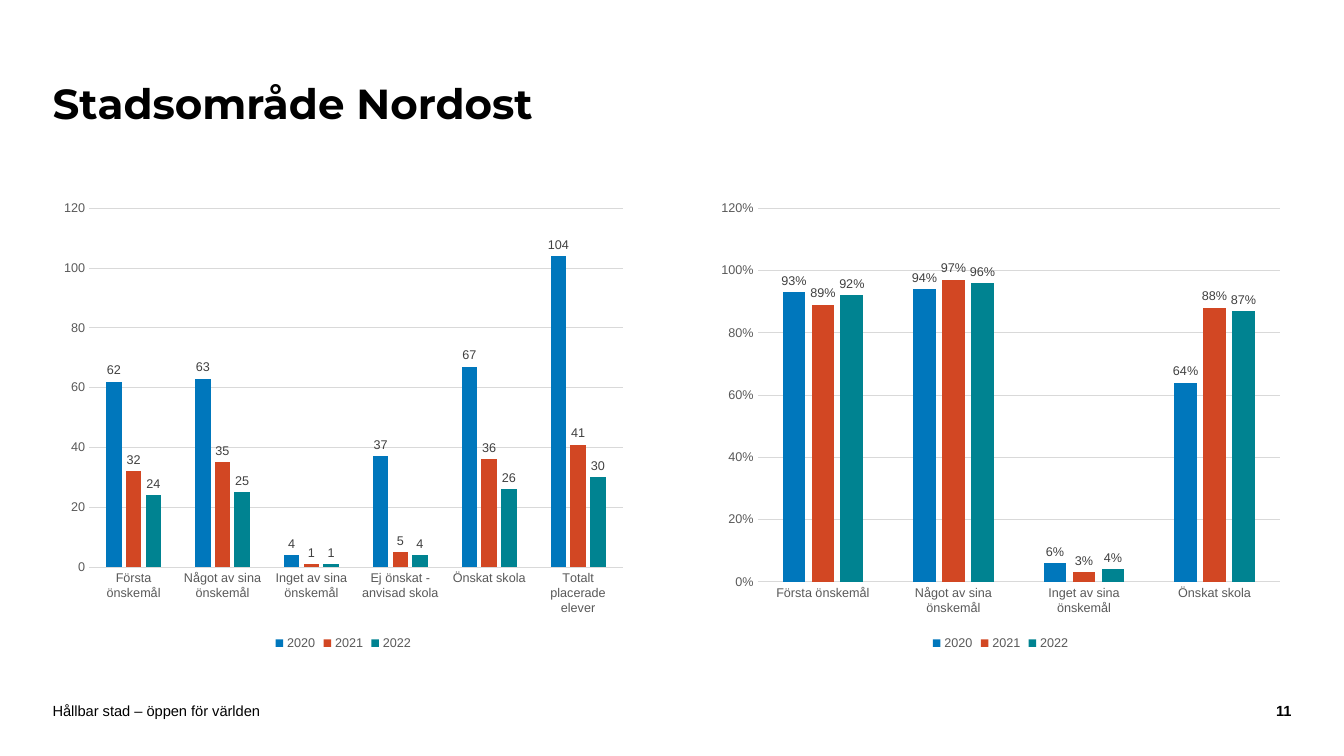
"""Build the slide on school placements in Stadsområde Nordost."""
from pptx import Presentation
from pptx.chart.data import CategoryChartData
from pptx.dml.color import RGBColor
from pptx.enum import chart as ch, text as tx
from pptx.util import Pt

HUES = {"ink": "000000", "axis": "595959", "grid": "D9D9D9", "label": "404040",
        "2020": "0077BC", "2021": "D24723", "2022": "008391"}
LEFT, WIDE = 37.5, 415.5


def style(font, size, hue, bold=False, face="Arial"):
    font.name, font.size, font.bold = face, Pt(size), bold
    font.color.rgb = RGBColor.from_string(HUES[hue])


def paint(line):
    line.color.rgb = RGBColor.from_string(HUES["grid"])
    line.width = Pt(0.75)


prs = Presentation()
prs.slide_width, prs.slide_height = Pt(960), Pt(540)
slide = prs.slides.add_slide(prs.slide_layouts[5])

title = slide.shapes.title
title.left, title.top, title.width, title.height = Pt(LEFT), Pt(30), Pt(722), Pt(91)
frame = title.text_frame
frame.text = "Stadsområde Nordost"
frame.margin_left = frame.margin_right = 0
frame.vertical_anchor = tx.MSO_ANCHOR.MIDDLE
frame.auto_size = tx.MSO_AUTO_SIZE.NONE
head = frame.paragraphs[0]
head.alignment, head.line_spacing = tx.PP_ALIGN.LEFT, 0.9
style(head.runs[0].font, 30, "ink", True, "Montserrat")

feet = [("Hållbar stad – öppen för världen", LEFT, 680, tx.PP_ALIGN.LEFT, False),
        ("11", 876, 46.5, tx.PP_ALIGN.RIGHT, True)]
for words, left, width, align, bold in feet:
    frame = slide.shapes.add_textbox(Pt(left), Pt(502), Pt(width), Pt(11.5)).text_frame
    frame.text = words
    frame.word_wrap = True
    frame.margin_left = frame.margin_right = frame.margin_top = frame.margin_bottom = 0
    frame.vertical_anchor = tx.MSO_ANCHOR.MIDDLE
    frame.paragraphs[0].alignment = align
    style(frame.paragraphs[0].runs[0].font, 10.5, "ink", bold)

wishes = ["Första önskemål", "Något av sina önskemål", "Inget av sina önskemål"]
count = {"2020": (62, 63, 4, 37, 67, 104),
         "2021": (32, 35, 1, 5, 36, 41),
         "2022": (24, 25, 1, 4, 26, 30)}
share = {"2020": (0.93, 0.94, 0.06, 0.64),
         "2021": (0.89, 0.97, 0.03, 0.88),
         "2022": (0.92, 0.96, 0.04, 0.87)}
plots = [
    (LEFT, wishes + ["Ej önskat - anvisad skola", "Önskat skola", "Totalt placerade elever"],
     count, "General", 120),
    (507, wishes + ["Önskat skola"], share, "0%", 1.2),
]
for left, cats, rows, form, top in plots:
    data = CategoryChartData(number_format=form)
    data.categories = cats
    for year, vals in rows.items():
        data.add_series(year, vals)
    chart = slide.shapes.add_chart(ch.XL_CHART_TYPE.COLUMN_CLUSTERED, Pt(left), Pt(137),
                                   Pt(WIDE), Pt(330.5), data).chart
    style(chart.font, 10, "ink")
    chart.has_title = False
    chart.has_legend = True
    chart.legend.position = ch.XL_LEGEND_POSITION.BOTTOM
    chart.legend.include_in_layout = False
    style(chart.legend.font, 9, "axis")

    for axis in (chart.category_axis, chart.value_axis):
        axis.major_tick_mark = axis.minor_tick_mark = ch.XL_TICK_MARK.NONE
        style(axis.tick_labels.font, 9, "axis")
    paint(chart.category_axis.format.line)
    axis = chart.value_axis
    axis.format.line.fill.background()
    axis.minimum_scale, axis.maximum_scale, axis.major_unit = 0, top, top / 6
    axis.tick_labels.number_format = form
    axis.tick_labels.number_format_is_linked = False
    paint(axis.major_gridlines.format.line)

    plot = chart.plots[0]
    plot.gap_width, plot.overlap, plot.vary_by_categories = 219, -27, False
    for bars in plot.series:
        bars.format.fill.solid()
        bars.format.fill.fore_color.rgb = RGBColor.from_string(HUES[bars.name])
        bars.invert_if_negative = False
        tags = bars.data_labels
        tags.show_value = True
        tags.position = ch.XL_LABEL_POSITION.OUTSIDE_END
        tags.number_format, tags.number_format_is_linked = form, False
        style(tags.font, 9, "label")

prs.save("out.pptx")
